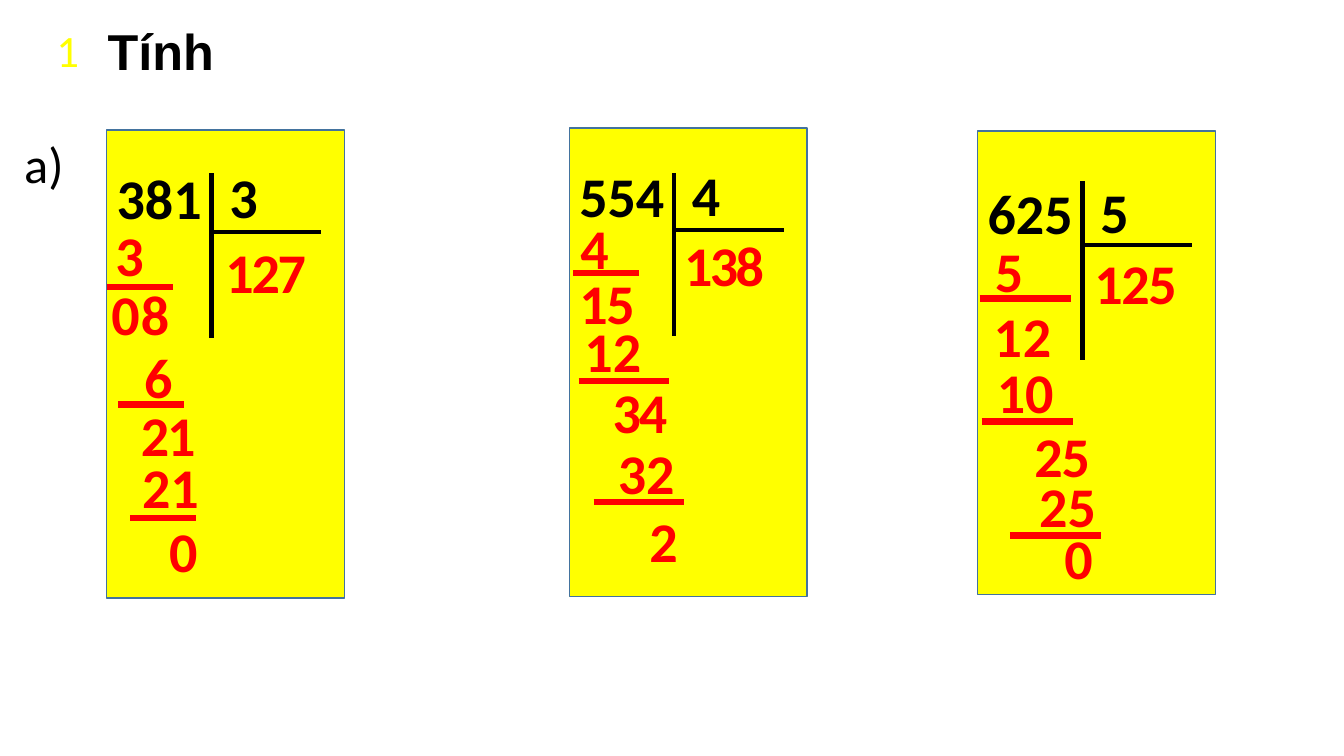
from dataclasses import dataclass

from lxml import etree
from pptx import Presentation
from pptx.dml.color import RGBColor
from pptx.enum.shapes import MSO_CONNECTOR as Connector, MSO_SHAPE as Preset
from pptx.enum.text import MSO_ANCHOR as Anchor, MSO_AUTO_SIZE as AutoSize, PP_ALIGN as Align
from pptx.oxml.ns import qn
from pptx.shapes.base import BaseShape
from pptx.slide import Slide
from pptx.util import Cm, Pt

COLORS = {"panel": "FFFF00", "edge": "43739E", "given": "000000", "answer": "FF0000"}
PANEL_WIDTH = 5.99
DIGIT_WIDTH = 2.01
DIGIT_HEIGHT = 1.96
STEM_OFFSET = 2.64
BAR_LENGTH = 2.77


@dataclass
class Number:
    """Answer digits; with a pitch, each digit has its own box."""
    text: str
    offset: float
    top: float
    pitch: float = 0
    align: Align = Align.LEFT


@dataclass
class Rule:
    offset: float
    y: float
    length: float


@dataclass
class Division:
    left: float
    top: float
    height: float
    dividend: str
    divisor: str
    given_top: float
    bar_y: float
    stem_top: float
    stem_bottom: float
    numbers: list[Number]
    rules: list[Rule]


DIVISIONS = [
    Division(2.69, 3.28, 11.79, "381", "3", 3.99, 5.84, 4.37, 8.51, [
        Number("127", 2.74, 5.87, 0.66),
        Number("3", -0.03, 5.44),
        Number("08", -0.13, 6.93, 0.74),
        Number("6", 0.69, 8.51),
        Number("21", 0.61, 9.98, 0.66),
        Number("21", 0.64, 11.28),
        Number("0", 0.53, 12.9, align=Align.RIGHT),
    ], [Rule(0, 7.24, 1.66), Rule(0.28, 10.19, 1.66), Rule(0.58, 13.06, 1.66)]),
    Division(14.35, 3.23, 11.81, "554", "4", 3.94, 5.79, 4.37, 8.46, [
        Number("138", 2.64, 5.69, 0.65),
        Number("4", 0.03, 5.26),
        Number("15", 0, 6.65, 0.68),
        Number("12", 0.13, 7.85),
        Number("34", 0.84, 9.4, 0.66),
        Number("32", 0.97, 10.92),
        Number("2", 0.97, 12.65, align=Align.RIGHT),
    ], [Rule(0.1, 6.88, 1.66), Rule(0.23, 9.6, 2.29), Rule(0.61, 12.65, 2.29)]),
    Division(24.64, 3.3, 11.68, "625", "5", 4.37, 6.17, 4.57, 9.07, [
        Number("125", 2.69, 6.15, 0.68),
        Number("5", 0.18, 5.84),
        Number("12", 0.15, 7.47, 0.74),
        Number("10", 0.23, 8.89),
        Number("25", 0.38, 10.5, 0.69, Align.RIGHT),
        Number("25", 1.3, 11.76),
        Number("0", 1.14, 13.08, align=Align.RIGHT),
    ], [Rule(0.05, 7.52, 2.29), Rule(0.1, 10.62, 2.29), Rule(0.81, 13.49, 2.29)]),
]


def rgb(name: str) -> RGBColor:
    return RGBColor.from_string(COLORS[name])


def write(box: BaseShape, text: str, color: str, align: Align = Align.LEFT,
          size: int = 40, bold: bool = True, font: str = "Calibri") -> None:
    frame = box.text_frame
    for name, value in {"word_wrap": True, "auto_size": AutoSize.NONE,
                        "vertical_anchor": Anchor.TOP}.items():
        setattr(frame, name, value)
    para = frame.paragraphs[0]
    para.alignment = align
    span = para.add_run()
    span.text = text
    for name, value in {"name": font, "size": Pt(size), "bold": bold}.items():
        setattr(span.font, name, value)
    span.font.color.rgb = rgb(color)


def add_text(page: Slide, left: float, top: float, width: float, height: float,
             text: str, color: str, **style) -> None:
    box = page.shapes.add_textbox(Cm(left), Cm(top), Cm(width), Cm(height))
    write(box, text, color, **style)


def add_line(page: Slide, x1: float, y1: float, x2: float, y2: float,
             color: str, weight: float) -> None:
    line = page.shapes.add_connector(Connector.STRAIGHT, Cm(x1), Cm(y1), Cm(x2), Cm(y2))
    line.line.color.rgb = rgb(color)
    line.line.width = Pt(weight)
    etree.SubElement(line._element.spPr, qn("a:effectLst"))


def add_number(page: Slide, left: float, number: Number) -> None:
    parts = list(number.text) if number.pitch else [number.text]
    for index, part in enumerate(parts):
        add_text(page, left + number.offset + index * number.pitch, number.top,
                 DIGIT_WIDTH, DIGIT_HEIGHT, part, "answer", align=number.align)


def add_division(page: Slide, division: Division) -> None:
    left = division.left
    panel = page.shapes.add_shape(Preset.RECTANGLE, Cm(left), Cm(division.top),
                                  Cm(PANEL_WIDTH), Cm(division.height))
    panel.shadow.inherit = False
    panel.fill.solid()
    panel.fill.fore_color.rgb = rgb("panel")
    panel.line.color.rgb = rgb("edge")
    panel.line.width = Pt(1)

    add_text(page, left, division.given_top, 2.77, DIGIT_HEIGHT, division.dividend, "given")
    add_text(page, left + 2.84, division.given_top - 0.03, DIGIT_WIDTH, DIGIT_HEIGHT,
             division.divisor, "given")
    stem = left + STEM_OFFSET
    add_line(page, stem, division.bar_y, stem + BAR_LENGTH, division.bar_y, "given", 3)
    add_line(page, stem, division.stem_top, stem, division.stem_bottom, "given", 3)
    for number in division.numbers:
        add_number(page, left, number)
    for rule in division.rules:
        start = left + rule.offset
        add_line(page, start, rule.y, start + rule.length, rule.y, "answer", 4.5)


def main() -> None:
    deck = Presentation()
    deck.slide_width, deck.slide_height = Cm(33.87), Cm(19.05)
    page = deck.slides.add_slide(deck.slide_layouts[5])

    title = page.shapes.title
    for name, value in {"left": 2.46, "top": 0.38, "width": 4.78, "height": 1.8}.items():
        setattr(title, name, Cm(value))
    write(title, "Tính", "given", size=36, font="Arial")
    add_text(page, 1.17, 0.46, 1.55, 1.63, "1", "panel",
             align=Align.JUSTIFY, size=32, bold=False)
    add_text(page, 0.36, 3.23, 1.68, 1.8, "a)", "given", size=36, bold=False)
    for division in DIVISIONS:
        add_division(page, division)
    deck.save("out.pptx")


if __name__ == "__main__":
    main()
